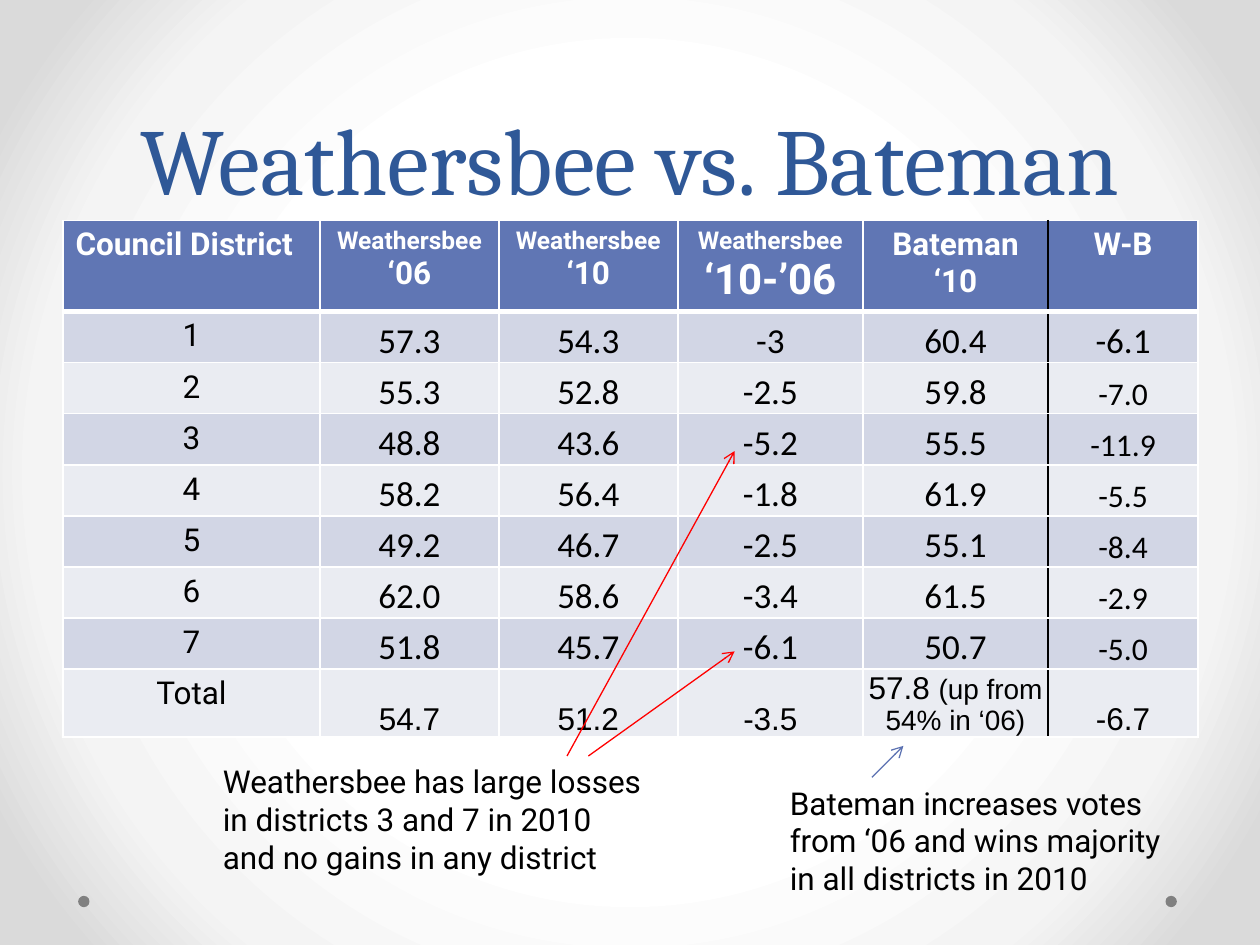
from dataclasses import dataclass

from lxml import etree
from pptx import Presentation
from pptx.dml.color import RGBColor
from pptx.enum.shapes import MSO_CONNECTOR, MSO_SHAPE
from pptx.enum.text import MSO_ANCHOR, MSO_AUTO_SIZE, PP_ALIGN
from pptx.oxml import parse_xml
from pptx.oxml.ns import nsdecls, qn
from pptx.util import Inches, Pt

STRAIGHT, OVAL = MSO_CONNECTOR.STRAIGHT, MSO_SHAPE.OVAL
TOP, BOTTOM = MSO_ANCHOR.TOP, MSO_ANCHOR.BOTTOM
LEFT, CENTER = PP_ALIGN.LEFT, PP_ALIGN.CENTER


@dataclass(frozen=True)
class Theme:
    title: str = "2F5897"
    header: str = "6076B4"
    bands: tuple = ("D2D6E5", "EAECF2")
    white: str = "FFFFFF"
    black: str = "000000"
    dot: str = "808080"
    loss: str = "FF0000"
    gain: str = "5C72B2"
    backdrop: tuple = ((50, "FFFFFF"), (76, "F4F4F4"), (92, "DADADA"))
    heading_font: str = "Cambria"
    body_font: str = "Roboto"
    figure_font: str = "Calibri"
    total_font: str = "Arial"
    title_size: int = 54
    figure_size: int = 20
    body_size: int = 18
    remark_size: int = 16
    small_size: int = 14
    big_size: int = 24


THEME = Theme()

# Content: each header is a list of paragraphs, each a list of (text, size) runs
TITLE = "Weathersbee vs. Bateman"
SMALL, BODY, BIG = THEME.small_size, THEME.body_size, THEME.big_size
HEADERS = [
    [[("Council District", BODY)]],
    [[("Weathersbee ", SMALL), ("‘06", BODY)]],
    [[("Weathersbee", SMALL)], [("‘10", BODY)]],
    [[("Weathersbee ", SMALL), ("‘10-’06", BIG)]],
    [[("Bateman", BODY)], [("‘10", BODY)]],
    [[("W-B", BODY)]],
]
DISTRICTS = [
    ("1", "57.3", "54.3", "-3", "60.4", "-6.1"),
    ("2", "55.3", "52.8", "-2.5", "59.8", "-7.0"),
    ("3", "48.8", "43.6", "-5.2", "55.5", "-11.9"),
    ("4", "58.2", "56.4", "-1.8", "61.9", "-5.5"),
    ("5", "49.2", "46.7", "-2.5", "55.1", "-8.4"),
    ("6", "62.0", "58.6", "-3.4", "61.5", "-2.9"),
    ("7", "51.8", "45.7", "-6.1", "50.7", "-5.0"),
]
TOTALS = ("Total", "54.7", "51.2", "-3.5", "57.8 ", "-6.7")
BATEMAN_REMARK = "(up from 54% in ‘06)"
NOTES = [
    ("Weathersbee has large losses in districts 3 and 7 in 2010 "
     "and no gains in any district", (1.67, 6, 3.58, 1.01)),
    ("Bateman increases votes from ‘06 and wins majority "
     "in all districts in 2010", (6.17, 6.17, 3.33, 1.01)),
]
ARROWS = [
    ((4.5, 6), (5.83, 3.58), THEME.loss),
    ((4.67, 6), (5.83, 5.17), THEME.loss),
    ((6.92, 6.17), (7.17, 5.92), THEME.gain),
]

# Layout, in inches
WIDTH, HEIGHT, MARGIN, TITLE_HEIGHT = 10, 7.5, 0.5, 1.75
COLUMNS = (2.04, 1.42, 1.42, 1.47, 1.47, 1.19)
ROW_HEIGHT = Pt(29.2)
BATEMAN, GAP = 4, 5
DOT_SIZE, DOT_INSET, DOT_TOP = 0.09, 0.62, 7.11


def rgb(code):
    return RGBColor.from_string(code)


def box(*lengths):
    return [Inches(length) for length in lengths]


def write(frame, paragraphs, font, color, align=LEFT, bold=False):
    for index, runs in enumerate(paragraphs):
        paragraph = frame.add_paragraph() if index else frame.paragraphs[0]
        paragraph.alignment = align
        style = paragraph.font
        style.name, style.bold = font, bold
        style.color.rgb = rgb(color)
        style.size = Pt(runs[0][1])
        for text, size in runs:
            run = paragraph.add_run()
            run.text = text
            if size != runs[0][1]:
                run.font.size = Pt(size)


def rule_cell(cell, column, is_header):
    """White rules, with a black one between Bateman and W-B."""
    edges = {
        "lnL": (THEME.black if column == GAP else THEME.white, 1),
        "lnR": (THEME.black if column == BATEMAN else THEME.white, 1),
        "lnT": (THEME.white, 3 if not is_header and cell is None else 1),
        "lnB": (THEME.white, 3 if is_header else 1),
    }
    properties = cell._tc.get_or_add_tcPr()
    for edge, (color, points) in edges.items():
        line = etree.SubElement(properties, qn("a:" + edge), w=str(Pt(points)))
        fill = etree.SubElement(line, qn("a:solidFill"))
        etree.SubElement(fill, qn("a:srgbClr"), val=color)


def fill_cell(cell, row, column):
    is_header, is_total = row == 0, row == len(DISTRICTS) + 1
    rule_cell(cell, column, is_header)
    cell.fill.solid()
    cell.fill.fore_color.rgb = rgb(THEME.header if is_header else THEME.bands[(row - 1) % 2])
    if is_header:
        write(cell.text_frame, HEADERS[column], THEME.body_font, THEME.white,
              CENTER if column else LEFT, bold=True)
        return
    text = (TOTALS if is_total else DISTRICTS[row - 1])[column]
    font, size = THEME.body_font, THEME.body_size
    cell.vertical_anchor = BOTTOM if column else TOP
    if column:
        cell.margin_left = cell.margin_right = cell.margin_top = Inches(0.01)
        cell.margin_bottom = 0
        font = THEME.total_font if is_total else THEME.figure_font
        if not is_total and (column != GAP or row == 1):
            size = THEME.figure_size
    runs = [(text, size)]
    if is_total and column == BATEMAN:
        runs.append((BATEMAN_REMARK, THEME.remark_size))
    write(cell.text_frame, [runs], font, THEME.black, CENTER)


def add_arrow(slide, start, end, color):
    arrow = slide.shapes.add_connector(STRAIGHT, *box(*start, *end))
    arrow.line.color.rgb = rgb(color)
    arrow.line.width = Pt(0.75)
    etree.SubElement(arrow.line._get_or_add_ln(), qn("a:tailEnd"), type="arrow")
    etree.SubElement(arrow._element.spPr, qn("a:effectLst"))


def main():
    deck = Presentation()
    deck.slide_width, deck.slide_height = box(WIDTH, HEIGHT)
    slide = deck.slides.add_slide(deck.slide_layouts[5])

    # Radial backdrop
    stops = "".join(f'<a:gs pos="{share * 1000}"><a:srgbClr val="{color}"/></a:gs>'
                    for share, color in THEME.backdrop)
    slide.element.cSld.insert(0, parse_xml(
        f'<p:bg {nsdecls("p", "a")}><p:bgPr><a:gradFill rotWithShape="1">'
        f'<a:gsLst>{stops}</a:gsLst><a:path path="circle"><a:fillToRect '
        'l="50000" t="50000" r="50000" b="50000"/></a:path></a:gradFill>'
        '<a:effectLst/></p:bgPr></p:bg>'))

    # Corner dots
    for left in (WIDTH - DOT_INSET - DOT_SIZE - 0.04, DOT_INSET):
        dot = slide.shapes.add_shape(OVAL, *box(left, DOT_TOP, DOT_SIZE, DOT_SIZE))
        dot.shadow.inherit = False
        dot.fill.solid()
        dot.fill.fore_color.rgb = rgb(THEME.dot)
        dot.line.fill.background()

    # Title
    title = slide.shapes.title
    title.left, title.top, title.width, title.height = box(
        MARGIN, 0, WIDTH - 2 * MARGIN, TITLE_HEIGHT)
    title.text_frame.vertical_anchor = BOTTOM
    title.text_frame.auto_size = MSO_AUTO_SIZE.NONE
    write(title.text_frame, [[(TITLE, THEME.title_size)]],
          THEME.heading_font, THEME.title, CENTER)
    title.text_frame.paragraphs[0].line_spacing = Pt(58)

    # Vote shares
    row_count = len(DISTRICTS) + 2
    votes = slide.shapes.add_table(
        row_count, len(COLUMNS), *box(MARGIN, TITLE_HEIGHT, sum(COLUMNS)),
        ROW_HEIGHT * row_count).table
    for column, width in enumerate(COLUMNS):
        votes.columns[column].width = Inches(width)
    for row in range(row_count):
        votes.rows[row].height = ROW_HEIGHT
        for column in range(len(COLUMNS)):
            fill_cell(votes.cell(row, column), row, column)

    # Notes and their arrows
    for text, place in NOTES:
        note = slide.shapes.add_textbox(*box(*place)).text_frame
        note.word_wrap = True
        note.auto_size = MSO_AUTO_SIZE.SHAPE_TO_FIT_TEXT
        write(note, [[(text, THEME.body_size)]], THEME.body_font, THEME.black)
    for start, end, color in ARROWS:
        add_arrow(slide, start, end, color)

    deck.save("out.pptx")


if __name__ == "__main__":
    main()
